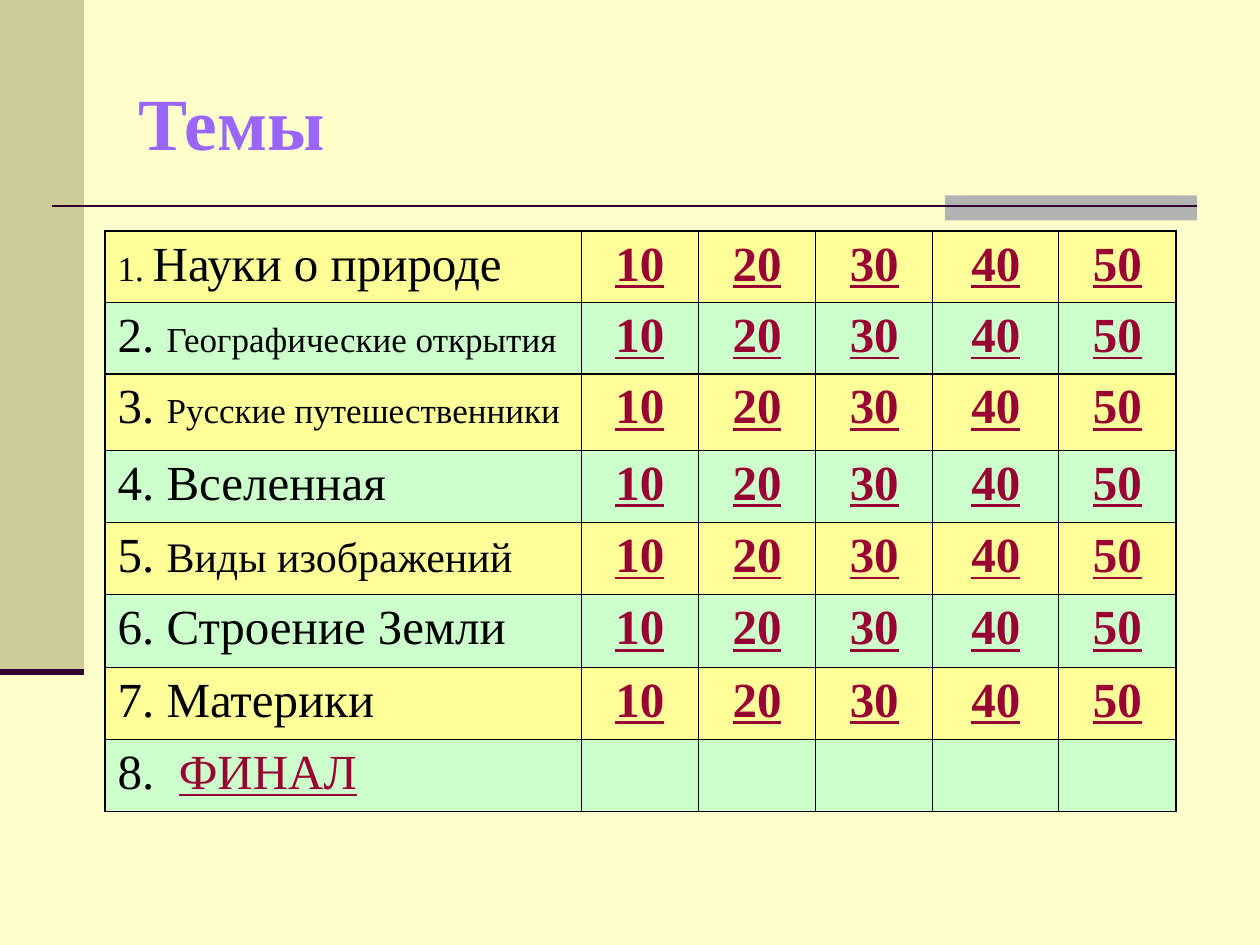
from lxml.etree import SubElement
from pptx import Presentation
from pptx.dml.color import RGBColor
from pptx.enum.shapes import MSO_CONNECTOR, MSO_SHAPE
from pptx.enum.text import MSO_ANCHOR, PP_ALIGN
from pptx.oxml.ns import qn
from pptx.util import Inches, Pt

WIDTH, HEIGHT = 10, 7.5
COLUMNS, ROWS = 12, 9
FONT = "Times New Roman"
BLACK, PLUM, WINE = "000000", "330033", "990033"
BANDS = ("FFFF99", "CCFFCC")
POINTS = ("10", "20", "30", "40", "50")
TOPICS = (
    (("1. ", 20), ("Науки о природе", 28)),
    (("2. ", 28), ("Географические открытия", 20)),
    (("3. ", 28), ("Русские путешественники", 20)),
    (("4. Вселенная", 28),),
    (("5. ", 28), ("Виды изображений", 24)),
    (("6. Строение Земли", 28),),
    (("7. Материки", 28),),
    (("8.  ", 28), ("ФИНАЛ", 28)),
)
COLUMN_WEIGHTS = (3.78, 0.93, 0.93, 0.93, 1, 0.93)
ROW_WEIGHTS = (0.52, 0.53, 0.6, 0.57, 0.57, 0.57, 0.57, 0.57)


def color(value):
    return RGBColor.from_string(value)


def col(n):
    return Inches(WIDTH * n / COLUMNS)


def row(n):
    return Inches(HEIGHT * n / ROWS)


def place(box):
    x, y, w, h = box
    return col(x), row(y), col(w), row(h)


def add_block(s, box, fill):
    sp = s.shapes.add_shape(MSO_SHAPE.RECTANGLE, *place(box))
    sp.shadow.inherit = False
    sp.fill.solid()
    sp.fill.fore_color.rgb = color(fill)
    sp.line.fill.background()


def add_rule(s, x1, x2, y, weight):
    line = s.shapes.add_connector(MSO_CONNECTOR.STRAIGHT, col(x1), row(y), col(x2), row(y))
    line.line.color.rgb = color(PLUM)
    line.line.width = Pt(weight)
    SubElement(line._element.spPr, qn("a:effectLst"))


def add_run(p, text, size, fill, bold=False, underline=False):
    r = p.add_run()
    r.text = text
    r.font.name = FONT
    r.font.size = Pt(size)
    r.font.bold = bold
    r.font.underline = underline
    r.font.color.rgb = color(fill)


def add_sidebar(s, box):
    x, y, w, h = box
    add_block(s, box, "CCCC99")
    add_rule(s, x, x + w, y + h, 3.5)


def add_divider(s, box):
    x, y, w, h = box
    accent = 2.4
    add_block(s, (x + w - accent, y, accent, h), "B2B2B2")
    add_rule(s, x, x + w, y + h * 0.42, 1.5)


def add_title(s, box):
    tf = s.shapes.add_textbox(*place(box)).text_frame
    tf.word_wrap = True
    tf.vertical_anchor = MSO_ANCHOR.MIDDLE
    add_run(tf.paragraphs[0], "Темы", 42, "9966FF", bold=True)


def style_cell(cell, fill):
    cell.fill.solid()
    cell.fill.fore_color.rgb = color(fill)
    tcPr = cell._tc.get_or_add_tcPr()
    for i, side in enumerate(("a:lnL", "a:lnR", "a:lnT", "a:lnB")):
        ln = tcPr.makeelement(qn(side), {"w": str(Pt(0.75))})
        solid = SubElement(ln, qn("a:solidFill"))
        SubElement(solid, qn("a:srgbClr"), val=BLACK)
        tcPr.insert(i, ln)
    pPr = cell.text_frame.paragraphs[0]._p.get_or_add_pPr()
    pPr.set("marL", str(Inches(0.38)))
    pPr.set("indent", str(-Inches(0.38)))


def add_board(s, box):
    x, y, w, h = place(box)
    table = s.shapes.add_table(len(TOPICS), len(COLUMN_WEIGHTS), x, y, w, h).table
    for column, weight in zip(table.columns, COLUMN_WEIGHTS):
        column.width = int(w * weight / sum(COLUMN_WEIGHTS))
    for line, weight in zip(table.rows, ROW_WEIGHTS):
        line.height = int(h * weight / sum(ROW_WEIGHTS))
    for i, topic in enumerate(TOPICS):
        final = i == len(TOPICS) - 1
        for cell in table.rows[i].cells:
            style_cell(cell, BANDS[i % 2])
        p = table.cell(i, 0).text_frame.paragraphs[0]
        for j, (text, size) in enumerate(topic):
            link = final and j == 1
            add_run(p, text, size, WINE if link else BLACK, underline=link)
        for j, points in enumerate(() if final else POINTS, 1):
            p = table.cell(i, j).text_frame.paragraphs[0]
            p.alignment = PP_ALIGN.CENTER
            add_run(p, points, 28, WINE, bold=True, underline=True)


def main():
    prs = Presentation()
    prs.slide_width, prs.slide_height = Inches(WIDTH), Inches(HEIGHT)
    s = prs.slides.add_slide(prs.slide_layouts[6])
    s.background.fill.solid()
    s.background.fill.fore_color.rgb = color("FFFFCC")
    add_sidebar(s, (0, 0, 0.8, 6.4))
    add_divider(s, (0.5, 1.86, 10.9, 0.24))
    add_title(s, (1.2, 0.4, 10.2, 1.5))
    add_board(s, (1, 2.2, 10.2, 5.44))
    prs.save("out.pptx")


if __name__ == "__main__":
    main()
